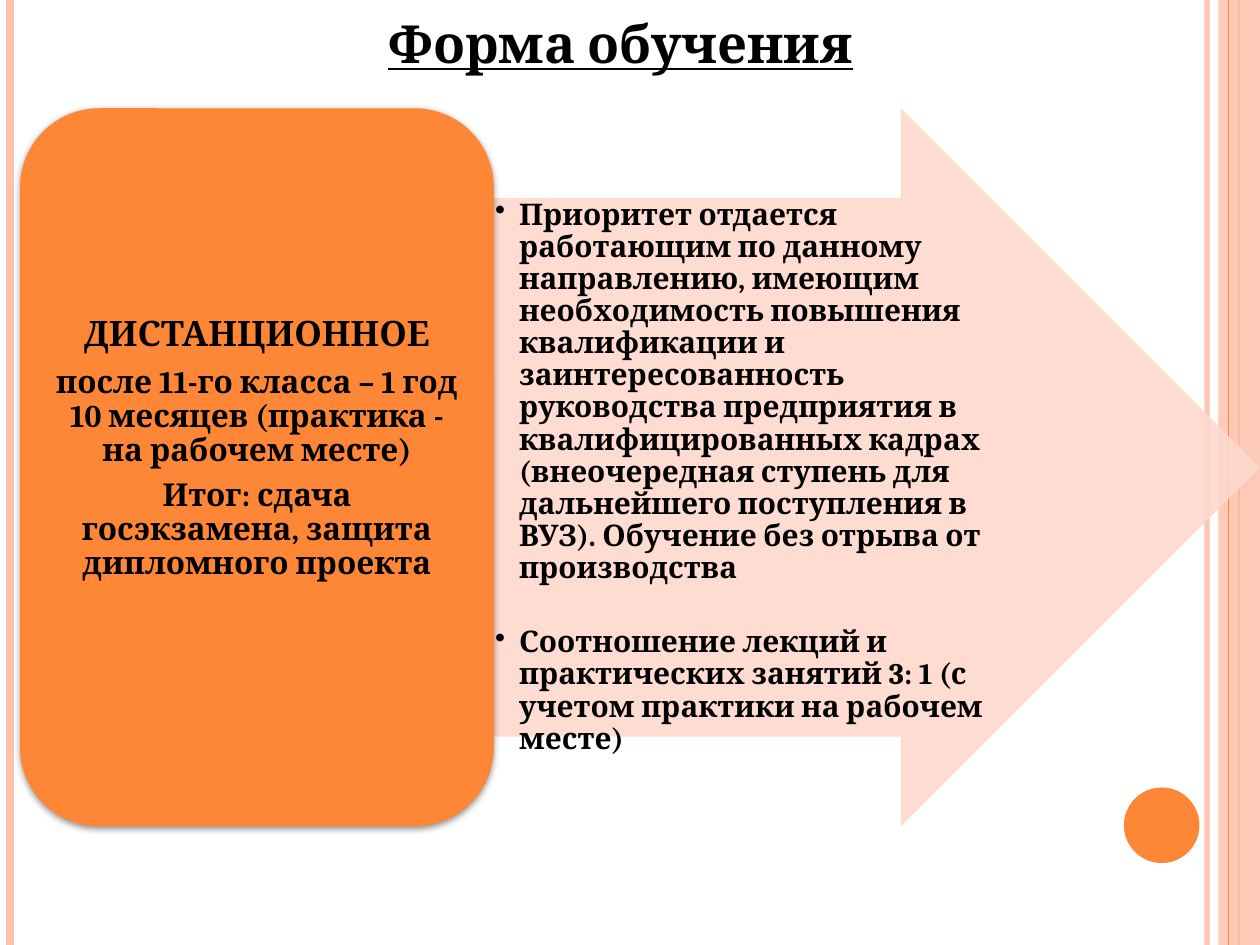
from dataclasses import dataclass

from lxml import etree
from pptx import Presentation
from pptx import util as u
from pptx.dml.color import RGBColor
from pptx.enum import shapes, text
from pptx.oxml import ns


@dataclass(frozen=True)
class Theme:
    """Colours, font and type sizes of the slide."""
    accent: str = "FE8637"
    stripe: str = "FEC3AE"
    arrow: str = "FFD9CE"
    ink: str = "000000"
    font: str = "Cambria"
    title: int = 30
    heading: int = 20
    body: int = 18
    bullet: int = 17


THEME = Theme()
SHAPE = shapes.MSO_SHAPE
ALIGN = text.PP_ALIGN
ANCHOR = text.MSO_ANCHOR

TITLE = "Форма обучения"
CARD_TEXT = [
    ("ДИСТАНЦИОННОЕ", THEME.heading, 7),
    ("после 11-го класса – 1 год 10 месяцев (практика - на рабочем месте)", THEME.body, 6.3),
    ("Итог: сдача госэкзамена, защита дипломного проекта", THEME.body, 0),
]
BULLETS = [
    ("Приоритет отдается работающим по данному направлению, имеющим необходимость "
     "повышения квалификации и заинтересованность руководства предприятия в "
     "квалифицированных кадрах (внеочередная ступень для дальнейшего поступления в ВУЗ). "
     "Обучение без отрыва от производства", THEME.bullet, 24),
    ("Соотношение лекций и практических занятий 3: 1 (с учетом практики на рабочем месте)",
     THEME.bullet, 0),
]


def inches(box):
    """Turn numbers into lengths."""
    return [u.Inches(value) for value in box]


def apply(target, values):
    """Set attributes from a dict of format values."""
    for name, value in values.items():
        setattr(target, name, value)


def add_node(parent, tag, **attributes):
    """Append a DrawingML element and return it."""
    return etree.SubElement(parent, ns.qn(tag), {k: str(v) for k, v in attributes.items()})


def set_alpha(fill_owner, percent):
    """Make the solid colour under an element partly transparent."""
    colour = next(fill_owner.iter(ns.qn("a:srgbClr")))
    add_node(colour, "a:alpha", val=percent * 1000)


def add_panel(slide, preset, box, colour, alpha=100):
    """Add a filled preset shape without outline or shadow."""
    panel = slide.shapes.add_shape(preset, *inches(box))
    panel.shadow.inherit = False
    panel.fill.solid()
    panel.fill.fore_color.rgb = RGBColor.from_string(colour)
    panel.line.fill.background()
    if alpha < 100:
        set_alpha(panel.fill._xPr.find(ns.qn("a:solidFill")), alpha)
    return panel


def add_rule(slide, x, height, colour, width, alpha=100):
    """Add a vertical line from the top edge."""
    rule = slide.shapes.add_connector(
        shapes.MSO_CONNECTOR.STRAIGHT, *inches((x, 0, x, height)))
    rule.line.color.rgb = RGBColor.from_string(colour)
    rule.line.width = u.Pt(width)
    if alpha < 100:
        set_alpha(rule.line._get_or_add_ln(), alpha)
    add_node(rule._element.spPr, "a:effectLst")
    return rule


def add_copy(slide, box, paragraphs, insets, anchor, align, spacing=1.0, underline=False):
    """Add a bold text box and return its paragraphs."""
    frame = slide.shapes.add_textbox(*inches(box)).text_frame
    sides = ("margin_left", "margin_top", "margin_right", "margin_bottom")
    apply(frame, {"word_wrap": True, "vertical_anchor": anchor,
                  **dict(zip(sides, inches(insets)))})
    for index, (wording, size, after) in enumerate(paragraphs):
        paragraph = frame.add_paragraph() if index else frame.paragraphs[0]
        apply(paragraph, {"alignment": align, "line_spacing": spacing,
                          "space_after": u.Pt(after)})
        run = paragraph.add_run()
        run.text = wording
        apply(run.font, {"name": THEME.font, "size": u.Pt(size), "bold": True,
                         "underline": underline})
        run.font.color.rgb = RGBColor.from_string(THEME.ink)
    return frame.paragraphs


def draw_frame(slide, box):
    """Draw the edge stripes and the corner disc."""
    left, top, width, height = box
    right = left + width
    add_rule(slide, right - 0.42, height, THEME.stripe, 3, 93)
    add_rule(slide, left + 0.08, height, THEME.stripe, 4.5)
    band_axis = add_rule(slide, right - 0.17, height, THEME.accent, 1.5)
    band = add_panel(slide, SHAPE.RECTANGLE, (right - 0.33, top, 0.33, height),
                     THEME.stripe, 87)
    band_axis.begin_connect(band, 0)
    band_axis.end_connect(band, 2)
    add_rule(slide, right - 0.25, height, THEME.accent, 0.75)
    add_panel(slide, SHAPE.OVAL, (right - 1.08, top + height - 1.25, 0.6, 0.6), THEME.accent)


def draw_title(slide, box):
    """Write the underlined title."""
    add_copy(slide, box, [(TITLE, THEME.title, 0)], (0.1, 0.05, 0.1, 0.05),
             ANCHOR.BOTTOM, ALIGN.CENTER, underline=True)


def draw_arrow(slide, box):
    """Draw the arrow with its bulleted conditions."""
    left, top, width, height = box
    arrow = add_panel(slide, SHAPE.RIGHT_ARROW, box, THEME.arrow, 90)
    arrow.adjustments[0], arrow.adjustments[1] = 0.75, 0.5
    shaft = (left, top + height / 8, width - 2.14, height * 0.75)
    for paragraph in add_copy(slide, shaft, BULLETS, (0.01,) * 4,
                              ANCHOR.TOP, ALIGN.LEFT, 0.9):
        properties = paragraph._p.get_or_add_pPr()
        properties.set("marL", str(u.Inches(0.19)))
        properties.set("indent", str(u.Inches(-0.19)))
        add_node(properties, "a:buChar", char="•")


def draw_card(slide, box):
    """Draw the rounded card with the study terms."""
    left, top, width, height = box
    card = add_panel(slide, SHAPE.ROUNDED_RECTANGLE, box, THEME.accent)
    effects = card._element.spPr.find(ns.qn("a:effectLst"))
    shadow = add_node(effects, "a:outerShdw", blurRad=u.Pt(4), dist=u.Pt(1.6),
                      dir=90 * 60000, rotWithShape=0)
    add_node(shadow, "a:srgbClr", val=THEME.ink)
    set_alpha(shadow, 42)
    inset = 0.18
    inner = (left + inset, top + inset, width - 2 * inset, height - 2 * inset)
    add_copy(slide, inner, CARD_TEXT, (0.08, 0.04, 0.08, 0.34),
             ANCHOR.MIDDLE, ALIGN.CENTER, 0.9)


def main():
    """Build and save the slide."""
    deck = Presentation()
    deck.slide_width, deck.slide_height = inches((10, 7.5))
    slide = deck.slides.add_slide(deck.slide_layouts[6])
    draw_frame(slide, (0, 0, 10, 7.5))
    draw_title(slide, (0.55, 0, 8.75, 0.64))
    draw_arrow(slide, (3.92, 0.86, 6.08, 5.7))
    draw_card(slide, (0.16, 0.86, 3.76, 5.7))
    deck.save("out.pptx")


if __name__ == "__main__":
    main()
